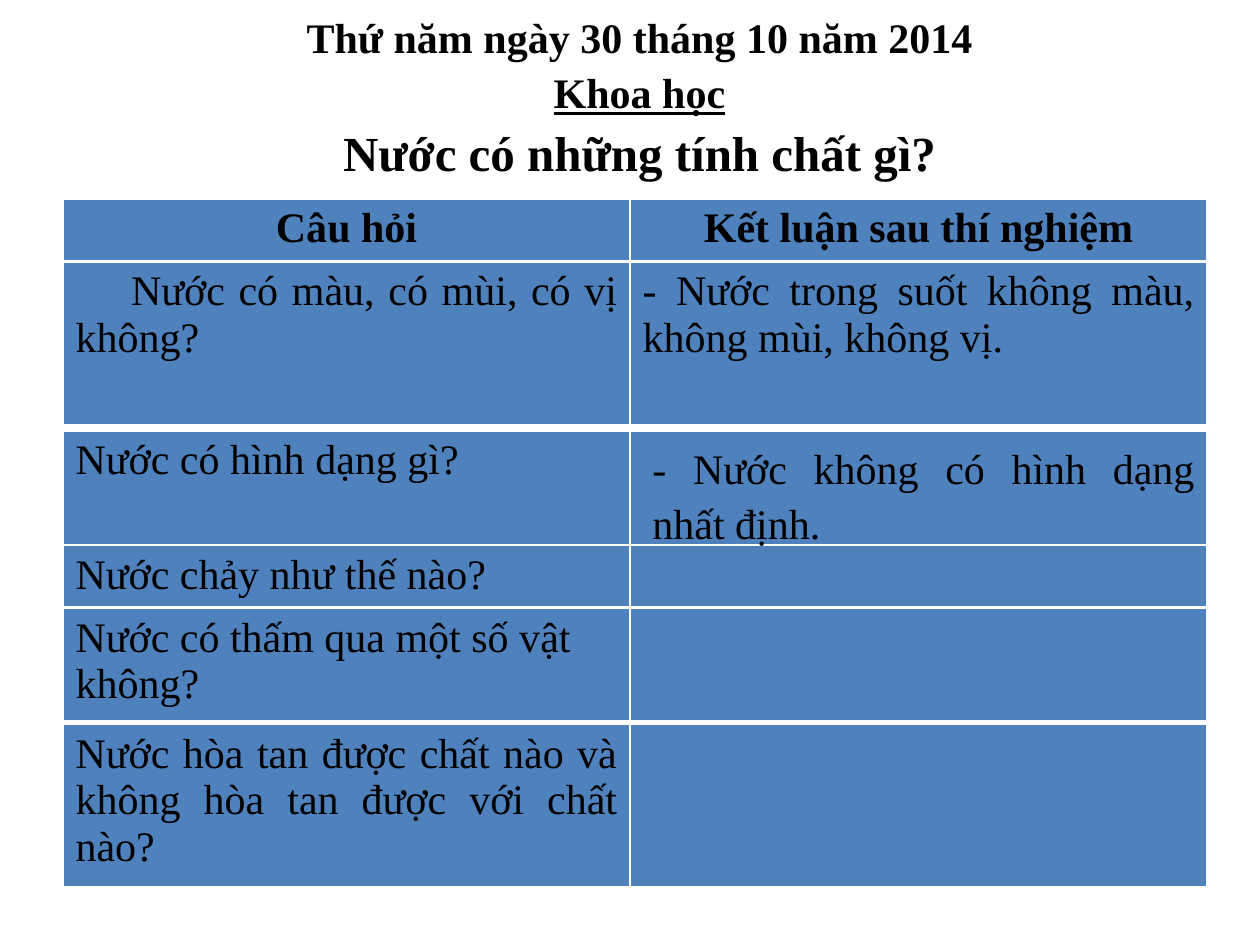
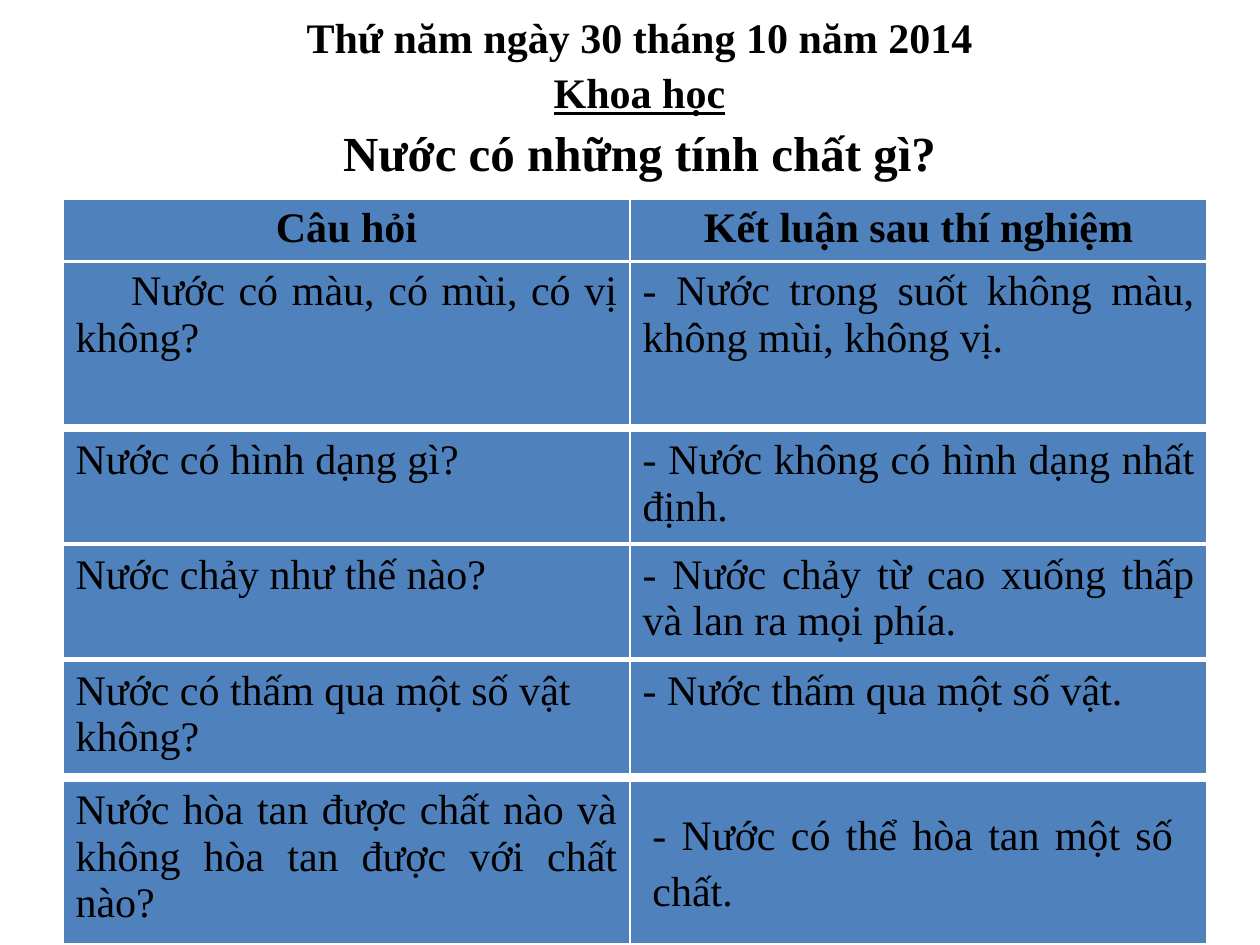
from lxml import etree
from pptx import Presentation
from pptx.dml.color import RGBColor
from pptx.enum.text import MSO_ANCHOR, MSO_AUTO_SIZE, PP_ALIGN
from pptx.oxml.ns import qn
from pptx.util import Emu, Pt

PX = 9144  # 100 px to the inch
FONT = "Times New Roman"
BLACK = RGBColor(0x00, 0x00, 0x00)
WHITE = RGBColor(0xFF, 0xFF, 0xFF)
BLUE = RGBColor(0x4F, 0x81, 0xBD)
LEFT, CENTER, JUSTIFY = PP_ALIGN.LEFT, PP_ALIGN.CENTER, PP_ALIGN.JUSTIFY
TOP = MSO_ANCHOR.TOP
GROW = MSO_AUTO_SIZE.SHAPE_TO_FIT_TEXT
TITLE_ONLY = 5

TABLE_LEFT = 50
COLUMN_WIDTHS = (450, 458)
BORDERS = {"lnL": 1, "lnR": 1, "lnT": 1, "lnB": 3}
LOOSE_SPACING = 1.1
FIRST_LINE_INDENT = 44

HEADINGS = ("Câu hỏi", "Kết luận sau thí nghiệm")
QUESTIONS = (
    ("Nước có màu, có mùi, có vị không?", JUSTIFY, FIRST_LINE_INDENT),
    ("Nước có hình dạng gì?", LEFT, 0),
    ("Nước chảy như thế nào?", LEFT, 0),
    ("Nước có thấm qua một số vật không?", LEFT, 0),
    ("Nước hòa tan được chất nào và không hòa tan được với chất nào?", JUSTIFY, 0),
)
COLOURLESS = "- Nước trong suốt không màu, không mùi, không vị."
SHAPELESS = "- Nước không có hình dạng nhất định."
FLOWS = "- Nước chảy từ cao xuống thấp và lan ra mọi phía."
SOAKS = "- Nước thấm qua một số vật."
DISSOLVES = "- Nước có thể hòa tan một số chất."

# Each lesson page: (top, height, answer) per question, then the loose answer.
LESSONS = (
    (((208, 130, COLOURLESS), (342, 92, ""), (433, 50, ""),
      (483, 90, ""), (575, 130, "")),
     (SHAPELESS, (508, 342, 450, 91))),
    (((208, 130, COLOURLESS), (342, 90, SHAPELESS), (433, 90, FLOWS),
      (525, 90, SOAKS), (620, 130, "")),
     (DISSOLVES, (508, 633, 433, 91))),
)


def px(length):
    return Emu(length * PX)


def write(para, text, size=24, bold=False, underline=False, align=LEFT,
          spacing=None, indent=0):
    para.alignment = align
    if spacing:
        para.line_spacing = spacing
    if indent:
        para._p.get_or_add_pPr().set("indent", str(px(indent)))
    span = para.add_run()
    span.text = text
    font = span.font
    font.name, font.size = FONT, Pt(size)
    font.bold, font.underline = bold, underline
    font.color.rgb = BLACK


def place_title(page):
    title = page.shapes.title
    title.left, title.top, title.width, title.height = map(px, (33, 0, 949, 138))
    frame = title.text_frame
    frame.word_wrap, frame.auto_size, frame.vertical_anchor = True, GROW, TOP
    lines = (
        ("Thứ năm ngày 30 tháng 10 năm 2014", {}),
        ("Khoa học", {"underline": True}),
        ("Nước có những tính chất gì?", {"size": 28}),
    )
    for number, (text, style) in enumerate(lines):
        para = frame.add_paragraph() if number else frame.paragraphs[0]
        write(para, text, bold=True, align=CENTER, spacing=LOOSE_SPACING, **style)


def add_answer_box(page, text, bounds):
    box = page.shapes.add_textbox(*map(px, bounds))
    frame = box.text_frame
    frame.word_wrap, frame.auto_size = True, GROW
    write(frame.paragraphs[0], text, align=JUSTIFY, spacing=LOOSE_SPACING)


def format_cell(cell):
    properties = cell._tc.get_or_add_tcPr()
    for tag, width in BORDERS.items():
        line = etree.SubElement(properties, qn(f"a:{tag}"), w=str(Pt(width)))
        fill = etree.SubElement(line, qn("a:solidFill"))
        etree.SubElement(fill, qn("a:srgbClr"), val=str(WHITE))
    cell.fill.solid()
    cell.fill.fore_color.rgb = BLUE


def add_row_table(page, top, height, contents):
    """Add a one-row table; contents holds a text and its format per column."""
    table = page.shapes.add_table(
        1, len(COLUMN_WIDTHS), px(TABLE_LEFT), px(top),
        px(sum(COLUMN_WIDTHS)), px(height)).table
    table.first_row = table.horz_banding = False
    for column, width in zip(table.columns, COLUMN_WIDTHS):
        column.width = px(width)
    for cell, (text, style) in zip(table.rows[0].cells, contents):
        format_cell(cell)
        if text:
            write(cell.text_frame.paragraphs[0], text, **style)


def add_lesson(deck, rows, loose_answer):
    page = deck.slides.add_slide(deck.slide_layouts[TITLE_ONLY])
    place_title(page)
    heading_style = {"bold": True, "align": CENTER}
    add_row_table(page, 158, 50, [(text, heading_style) for text in HEADINGS])
    for (question, align, indent), (top, height, answer) in zip(QUESTIONS, rows):
        add_row_table(page, top, height, (
            (question, {"align": align, "indent": indent}),
            (answer, {"align": JUSTIFY})))
    add_answer_box(page, *loose_answer)


def main():
    deck = Presentation()
    deck.slide_width, deck.slide_height = px(1000), px(750)
    for rows, loose_answer in LESSONS:
        add_lesson(deck, rows, loose_answer)
    deck.save("out.pptx")


if __name__ == "__main__":
    main()
